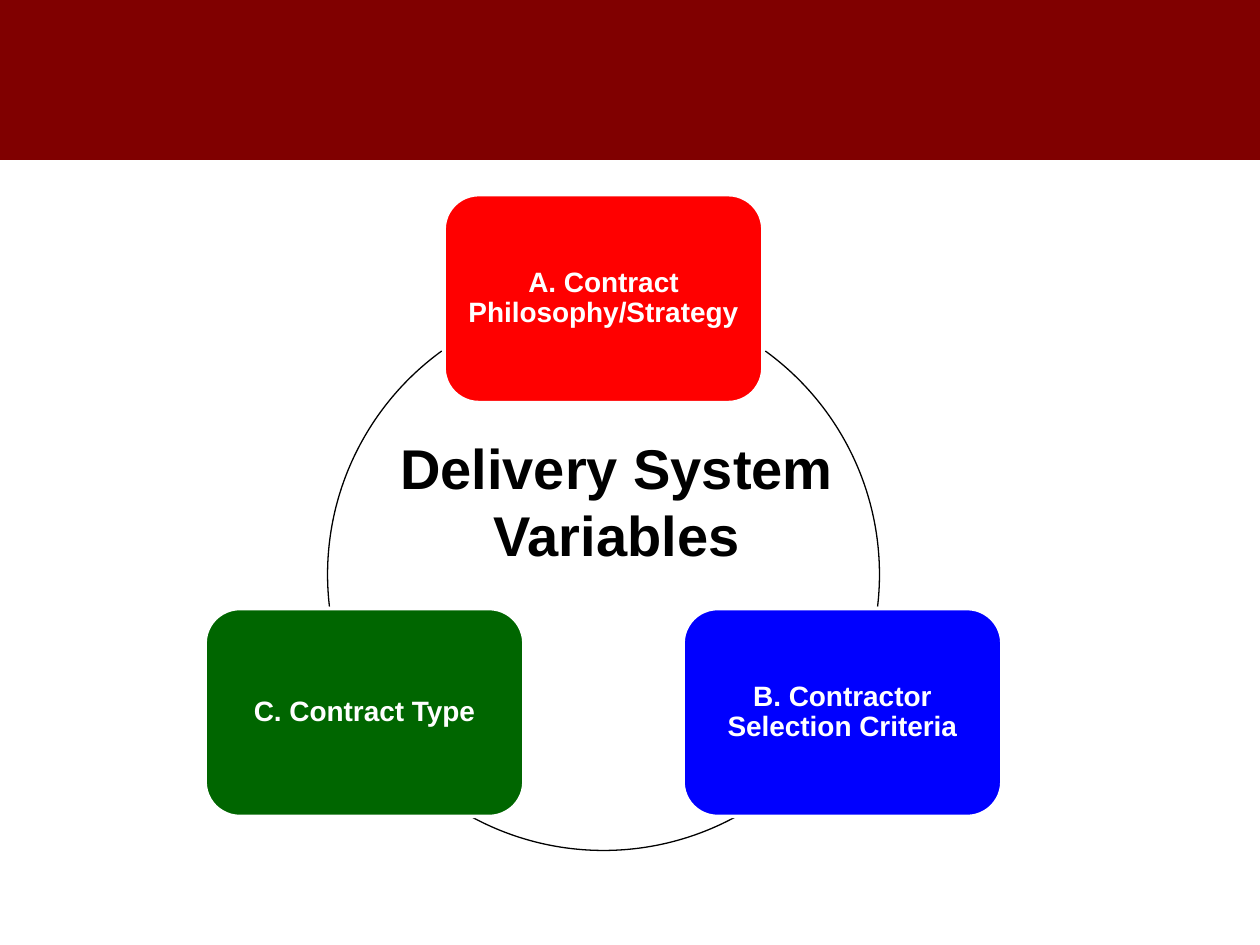
"""Build the delivery system variables cycle slide."""
import math

import pptx
import pptx.dml.color
import pptx.enum.shapes
import pptx.enum.text
import pptx.util

Inches = pptx.util.Inches
Pt = pptx.util.Pt
SHAPES = pptx.enum.shapes.MSO_SHAPE

TITLE = "Delivery System Variables"
VARIABLES = [
    ("A. Contract Philosophy/Strategy", "FF0000"),
    ("B. Contractor Selection Criteria", "0000FF"),
    ("C. Contract Type", "006600"),
]
ARCS = [(305.9, 6.66), (61.6, 118.4), (173.34, 234.1)]

THEME = {
    "font": "Arial",
    "banner": "800000",
    "ink": "000000",
    "paper": "FFFFFF",
    "title_size": 32,
    "card_size": 16,
}
CENTER_X, CENTER_Y, RADIUS = 4.79, 4.56, 2.19
CARD_W, CARD_H = 2.53, 1.65


def rgb(value):
    return pptx.dml.color.RGBColor.from_string(value)


def add_block(slide, preset, left, top, width, height, fill):
    block = slide.shapes.add_shape(
        preset, Inches(left), Inches(top), Inches(width), Inches(height))
    block.shadow.inherit = False
    block.fill.solid()
    block.fill.fore_color.rgb = rgb(fill)
    block.line.fill.background()
    return block


def write(frame, text, size, color):
    frame.word_wrap = True
    paragraph = frame.paragraphs[0]
    paragraph.text = text
    paragraph.alignment = pptx.enum.text.PP_ALIGN.CENTER
    font = paragraph.runs[0].font
    font.name = THEME["font"]
    font.size = Pt(size)
    font.bold = True
    font.color.rgb = rgb(color)
    return paragraph


def add_arc(slide, start, end):
    arc = slide.shapes.add_shape(
        SHAPES.ARC, Inches(CENTER_X - RADIUS), Inches(CENTER_Y - RADIUS),
        Inches(2 * RADIUS), Inches(2 * RADIUS))
    arc.shadow.inherit = False
    arc.adjustments[0] = start * 0.6
    arc.adjustments[1] = end * 0.6
    arc.fill.background()
    arc.line.color.rgb = rgb(THEME["ink"])
    arc.line.width = Pt(0.75)


def add_card(slide, label, fill, degrees):
    angle = math.radians(degrees)
    left = CENTER_X + RADIUS * math.cos(angle) - CARD_W / 2
    top = CENTER_Y + RADIUS * math.sin(angle) - CARD_H / 2
    card = add_block(slide, SHAPES.ROUNDED_RECTANGLE, left, top, CARD_W, CARD_H, fill)
    card.line.color.rgb = rgb(THEME["paper"])
    card.line.width = Pt(2)
    frame = card.text_frame
    frame.vertical_anchor = pptx.enum.text.MSO_ANCHOR.MIDDLE
    frame.margin_left = frame.margin_right = Inches(0.07)
    frame.margin_top = frame.margin_bottom = Inches(0.07)
    write(frame, label, THEME["card_size"], THEME["paper"]).line_spacing = 0.9


def main():
    deck = pptx.Presentation()
    deck.slide_width, deck.slide_height = Inches(10), Inches(7.5)
    slide = deck.slides.add_slide(deck.slide_layouts[6])

    add_block(slide, SHAPES.RECTANGLE, 0, 0, 10, 1.27, THEME["banner"])
    for start, end in ARCS:
        add_arc(slide, start, end)
    for index, (label, fill) in enumerate(VARIABLES):
        add_card(slide, label, fill, -90 + index * 360 / len(VARIABLES))

    heading = slide.shapes.add_textbox(
        Inches(2.31), Inches(3.39), Inches(5.17), Inches(1.18))
    write(heading.text_frame, TITLE, THEME["title_size"], THEME["ink"])
    heading.text_frame.auto_size = pptx.enum.text.MSO_AUTO_SIZE.SHAPE_TO_FIT_TEXT

    deck.save("out.pptx")


if __name__ == "__main__":
    main()
